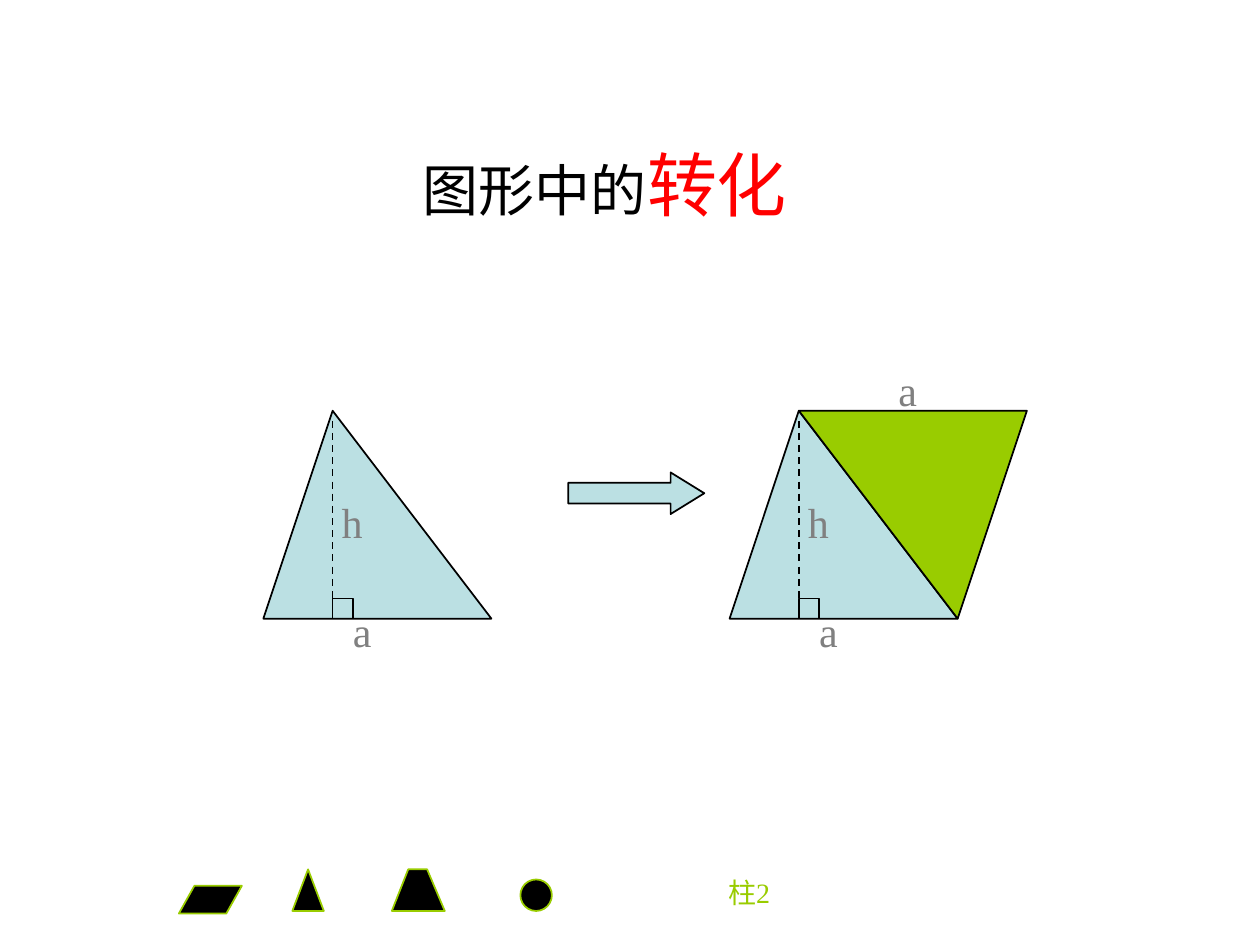
from pptx import Presentation
from pptx.dml.color import RGBColor
from pptx.enum.dml import MSO_LINE
from pptx.enum.shapes import MSO_CONNECTOR, MSO_SHAPE
from pptx.enum.text import MSO_ANCHOR, PP_ALIGN
from pptx.oxml.ns import qn
from pptx.util import Inches, Pt
from lxml.etree import SubElement

PALE, GREEN, BLACK, GRAY, RED = "BBE0E3", "99CC00", "000000", "808080", "FF0000"
WIDE, HIGH, APEX = 1.81, 1.65, 0.55


def color(code):
    """Turn a hex string into a colour."""
    return RGBColor.from_string(code)


def paint(shape, fill=None, line=BLACK):
    """Give a shape a flat fill and a one-point outline."""
    shape.shadow.inherit = False
    if fill:
        shape.fill.solid()
        shape.fill.fore_color.rgb = color(fill)
    else:
        shape.fill.background()
    shape.line.color.rgb = color(line)
    shape.line.width = Pt(1)


def draw(shapes, kind, box, fill=None, line=BLACK, adjust=()):
    """Add a painted preset shape in a box given in inches."""
    shape = shapes.add_shape(kind, *map(Inches, box))
    for index, value in enumerate(adjust):
        shape.adjustments[index] = value
    paint(shape, fill, line)
    return shape


def write(para, text, size=24, font="Times New Roman", ink=GRAY):
    """Add a centred, formatted run to a paragraph."""
    para.alignment = PP_ALIGN.CENTER
    run = para.add_run()
    run.text = text
    run.font.size = Pt(size)
    run.font.name = font
    run.font.color.rgb = color(ink)


def label(shapes, text, left, top, high=0.5, **style):
    """Add a short text box."""
    box = shapes.add_textbox(*map(Inches, (left, top, 0.63, high)))
    box.text_frame.word_wrap = True
    write(box.text_frame.paragraphs[0], text, **style)


def dash(shapes, left, top, end):
    """Add a dashed vertical line."""
    line = shapes.add_connector(
        MSO_CONNECTOR.STRAIGHT, *map(Inches, (left, top, left, end)))
    line.line.color.rgb = color(BLACK)
    line.line.width = Pt(1)
    line.line.dash_style = MSO_LINE.DASH
    SubElement(line._element.spPr, qn("a:effectLst"))


def figure(slide, left, top, double=False):
    """Draw the triangle with its height, doubled to a parallelogram if asked."""
    shapes = slide.shapes.add_group_shape().shapes
    foot, base = left + APEX, top + HIGH
    tip = [APEX / WIDE]
    draw(shapes, MSO_SHAPE.ISOSCELES_TRIANGLE, (left, top, WIDE, HIGH), PALE, adjust=tip)
    dash(shapes, foot, top + 0.08, base)
    if double:
        twin = draw(shapes, MSO_SHAPE.ISOSCELES_TRIANGLE,
                    (foot, top, WIDE, HIGH), GREEN, adjust=tip)
        twin.rotation = 180
        label(shapes, "a", left + 1.1, top - 0.42)
    draw(shapes, MSO_SHAPE.RECTANGLE, (foot, base - 0.16, 0.16, 0.16))
    label(shapes, "a", left + 0.47, base - 0.15)
    label(shapes, "h", left + 0.39, top + 0.63)


def heading(slide, left, top, wide, high):
    """Place the two-colour title."""
    title = slide.shapes.title
    title.left, title.top, title.width, title.height = map(
        Inches, (left, top, wide, high))
    title.text_frame.vertical_anchor = MSO_ANCHOR.MIDDLE
    para = title.text_frame.paragraphs[0]
    write(para, "图形中的", size=32, font="Arial", ink=BLACK)
    write(para, "转化", size=40, font="Arial", ink=RED)


def footer(slide, left, top):
    """Draw the row of small shapes and its caption."""
    shapes = slide.shapes
    icons = [
        (MSO_SHAPE.PARALLELOGRAM, 0, 0.13, 0.5, 0.22, [0.56]),
        (MSO_SHAPE.ISOSCELES_TRIANGLE, 0.9, 0, 0.25, 0.33, [0.5]),
        (MSO_SHAPE.OVAL, 2.71, 0.08, 0.25, 0.25, []),
    ]
    for kind, x, y, wide, high, adjust in icons:
        draw(shapes, kind, (left + x, top + y, wide, high), BLACK, GREEN, adjust)
    corners = [(1.69, 0.33), (1.82, 0), (1.97, 0), (2.11, 0.33)]
    points = [(Inches(left + x), Inches(top + y)) for x, y in corners]
    path = shapes.build_freeform(*points[0])
    path.add_line_segments(points[1:], close=True)
    paint(path.convert_to_shape(), BLACK, GREEN)
    label(shapes, "柱2", left + 4.21, top, high=0.37, size=16, ink=GREEN)


def main():
    """Build and save the slide."""
    deck = Presentation()
    deck.slide_width, deck.slide_height = Inches(10), Inches(7.5)
    slide = deck.slides.add_slide(deck.slide_layouts[5])
    heading(slide, 1.69, 0.91, 6.22, 1.1)
    draw(slide.shapes, MSO_SHAPE.RIGHT_ARROW, (4.51, 3.75, 1.08, 0.33),
         PALE, adjust=[0.5, 0.81])
    figure(slide, 2.09, 3.26)
    figure(slide, 5.79, 3.26, double=True)
    footer(slide, 1.42, 6.9)
    deck.save("out.pptx")


if __name__ == "__main__":
    main()
